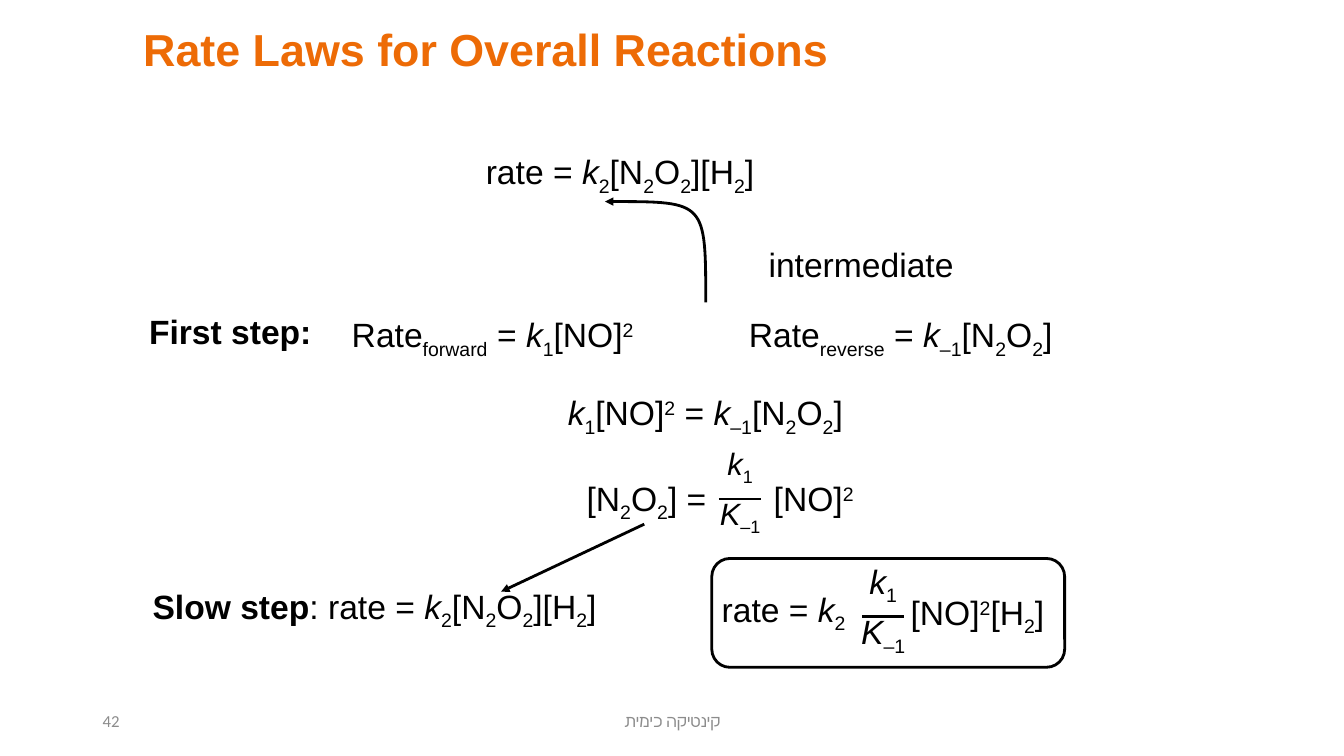
from lxml import etree
from pptx import Presentation
from pptx.dml.color import RGBColor
from pptx.enum.shapes import MSO_CONNECTOR, MSO_SHAPE
from pptx.enum.text import MSO_ANCHOR, MSO_AUTO_SIZE, PP_ALIGN
from pptx.oxml.ns import qn
from pptx.util import Inches, Pt

LEFT, CENTER = PP_ALIGN.LEFT, PP_ALIGN.CENTER
TOP, MIDDLE = MSO_ANCHOR.TOP, MSO_ANCHOR.MIDDLE
COLORS = {"title": "ED6B06", "ink": "000000", "footer": "8C8C8C"}
SUBSCRIPT, SUPERSCRIPT = "-25000", "30000"


class SlideBuilder:
    """Holds the style and the current slide.

    Formula runs are separated by "|"; a leading mark sets the run's style:
    "/" italic, "*" bold, "_" subscript, "^" superscript.
    """
    font, size, line_width = "Arial", 24, 2

    def __init__(self, presentation):
        self.slide = presentation.slides.add_slide(presentation.slide_layouts[5])

    def style(self, paragraph, size, color, font, align):
        paragraph.alignment = align
        paragraph.font.name = font
        paragraph.font.size = Pt(size)
        paragraph.font.color.rgb = RGBColor.from_string(COLORS[color])

    def title(self, text, left, top, width, height):
        shape = self.slide.shapes.title
        shape.left, shape.top = Inches(left), Inches(top)
        shape.width, shape.height = Inches(width), Inches(height)
        frame = shape.text_frame
        frame.text = text
        frame.auto_size = MSO_AUTO_SIZE.NONE
        frame.vertical_anchor = TOP
        frame.margin_left = Inches(0.5)
        self.style(frame.paragraphs[0], 32, "title", self.font, LEFT)
        frame.paragraphs[0].font.bold = True

    def text(self, markup, left, top, width, height=0.5, align=LEFT, anchor=TOP,
             size=None, color="ink", font=None, wrap=False):
        box = self.slide.shapes.add_textbox(
            Inches(left), Inches(top), Inches(width), Inches(height))
        frame = box.text_frame
        frame.word_wrap = wrap
        frame.vertical_anchor = anchor
        paragraph = frame.paragraphs[0]
        self.style(paragraph, size or self.size, color, font or self.font, align)
        for part in markup.split("|"):
            mark = part[0] if part[0] in "/*_^" else ""
            run = paragraph.add_run()
            run.text = part[len(mark):]
            if mark == "/":
                run.font.italic = True
            elif mark == "*":
                run.font.bold = True
            elif mark:
                run.font._element.set(
                    "baseline", SUBSCRIPT if mark == "_" else SUPERSCRIPT)
        return paragraph

    def footer(self, text, left, width, align):
        return self.text(text, left, 6.95, width, 0.4, align, MIDDLE,
                         12, "footer", "Calibri", True)

    def outline(self, shape, arrow=False):
        shape.line.color.rgb = RGBColor.from_string(COLORS["ink"])
        shape.line.width = Pt(self.line_width)
        if arrow:
            etree.SubElement(shape.line._get_or_add_ln(), qn("a:tailEnd"), type="triangle")

    def line(self, start, end, arrow=False):
        connector = self.slide.shapes.add_connector(
            MSO_CONNECTOR.STRAIGHT, *[Inches(value) for value in start + end])
        self.outline(connector, arrow)
        etree.SubElement(connector._element.spPr, qn("a:effectLst"))

    def curved_arrow(self, start, points):
        """Draw cubic curves; every three points are two controls and an end."""
        builder = self.slide.shapes.build_freeform(*start, scale=Inches(1))
        builder.add_line_segments(points, close=False)
        shape = builder.convert_to_shape()
        shape.fill.background()
        shape.shadow.inherit = False
        self.outline(shape, arrow=True)
        segments = shape._element.xpath(".//a:lnTo")
        for index in range(0, len(segments), 3):
            curve = etree.Element(qn("a:cubicBezTo"))
            segments[index].addprevious(curve)
            for segment in segments[index:index + 3]:
                curve.append(segment[0])
                segment.getparent().remove(segment)

    def fraction(self, center, bar_top, size):
        for markup, offset in (("/K|_–1", 0.17), ("/k|_1", -0.33)):
            self.text(markup, center - 0.34, bar_top + offset - 0.25, 0.68,
                      align=CENTER, anchor=MIDDLE, size=size)
        self.line((center - 0.21, bar_top), (center + 0.21, bar_top))

    def frame(self, left, top, width, height):
        shape = self.slide.shapes.add_shape(
            MSO_SHAPE.ROUNDED_RECTANGLE,
            Inches(left), Inches(top), Inches(width), Inches(height))
        shape.fill.background()
        shape.shadow.inherit = False
        self.outline(shape)


def main():
    presentation = Presentation()
    presentation.slide_width, presentation.slide_height = Inches(13.33), Inches(7.5)
    builder = SlideBuilder(presentation)
    dimer, rate_law = "[N|_2|O|_2|]", "rate = |/k|_2|[N|_2|O|_2|][H|_2|]"

    # Title and footer
    builder.title("Rate Laws for Overall Reactions", 0.92, 0.17, 10, 0.64)
    footer = builder.footer("קינטיקה כימית", 4.42, 4.5, CENTER)
    footer._p.get_or_add_pPr().set("rtl", "1")
    builder.footer("42", 0.92, 3, LEFT)

    # Rate law with its intermediate
    builder.text(rate_law, 4.72, 1.45, 2.95)
    builder.text("intermediate", 7.51, 2.37, 2.06, align=CENTER, anchor=MIDDLE)
    builder.curved_arrow((7.47, 2.62), [(7.22, 2.63), (6.97, 2.64), (6.81, 2.54),
                                        (6.64, 2.44), (6.56, 2.24), (6.47, 2.04)])

    # First step: forward and reverse rates, then their equality
    builder.text("*First step:", 1.38, 3.04, 1.83)
    builder.text("Rate|_forward| = |/k|_1|[NO]|^2", 3.39, 3.07, 3.15)
    builder.text("Rate|_reverse| = |/k|_–1|" + dimer, 7.33, 3.07, 3.4)
    builder.text("/k|_1|[NO]|^2| = |/k|_–1|" + dimer, 5.47, 3.87, 3.05,
                 align=CENTER, anchor=MIDDLE)

    # Intermediate concentration
    builder.text(dimer + " =", 5.72, 4.69, 1.43)
    builder.fraction(7.34, 4.95, 22)
    builder.text("[NO]|^2", 7.56, 4.69, 1.02, align=CENTER, anchor=MIDDLE)

    # Slow step
    builder.line((6.39, 5.2), (4.97, 5.87), arrow=True)
    builder.text("*Slow step|: " + rate_law, 1.36, 5.79, 4.71,
                 align=CENTER, anchor=MIDDLE)

    # Framed overall rate law
    builder.text("rate = |/k|_2", 7.06, 5.79, 1.46)
    builder.fraction(8.76, 6.12, 24)
    builder.text("[NO]|^2|[H|_2|]", 8.91, 5.85, 1.57, align=CENTER, anchor=MIDDLE)
    builder.frame(7.06, 5.54, 3.5, 1.08)

    presentation.save("out.pptx")


if __name__ == "__main__":
    main()
